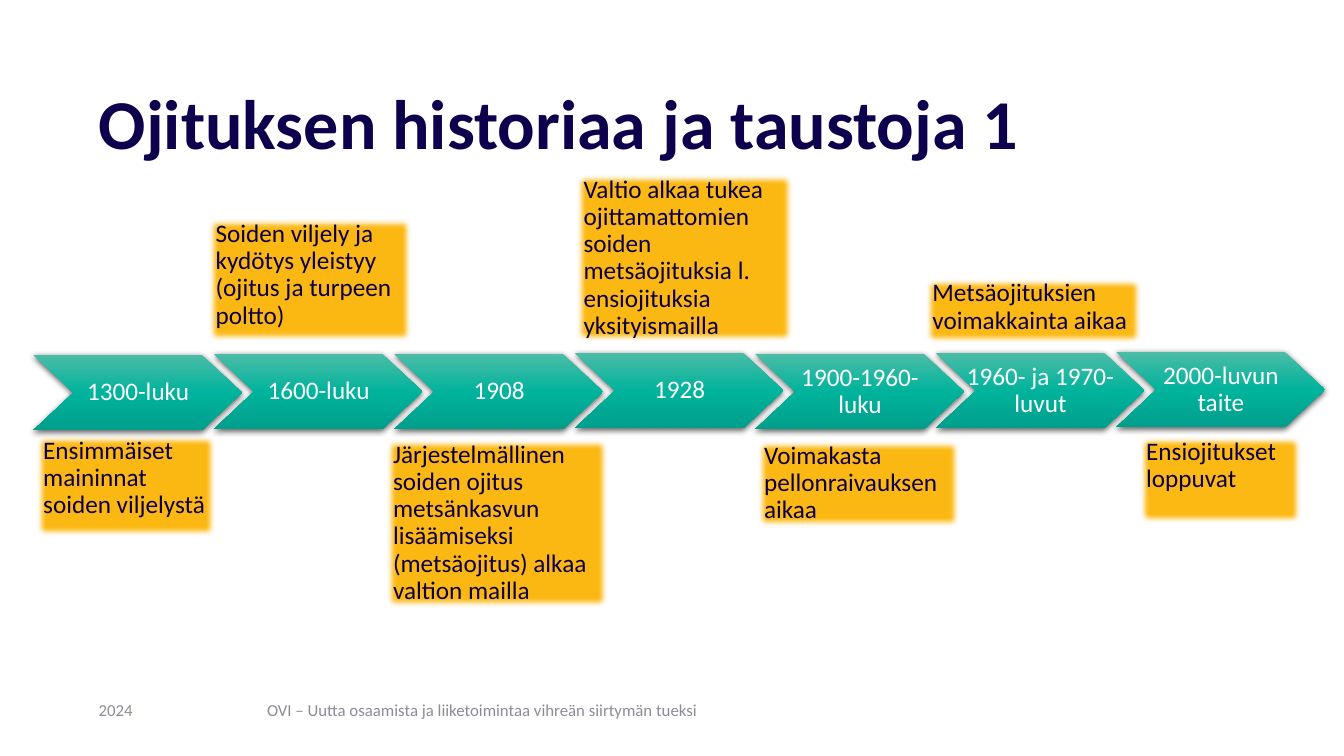
from copy import deepcopy

from lxml import etree
from pptx import Presentation
from pptx.dml.color import RGBColor
from pptx.enum.shapes import MSO_SHAPE
from pptx.enum.text import MSO_ANCHOR, PP_ALIGN
from pptx.oxml.ns import qn
from pptx.util import Inches, Pt

TOP, MIDDLE = MSO_ANCHOR.TOP, MSO_ANCHOR.MIDDLE
LEFT, CENTER = PP_ALIGN.LEFT, PP_ALIGN.CENTER
RECTANGLE = MSO_SHAPE.RECTANGLE

# Content
FONT = "Calibri"
COLORS = {"title": "0D004C", "note": "0D004B", "note_fill": "FDB913",
          "footer": "8C8C96", "period": "FFFFFF", "shadow": "000000"}
ARROW_GRADIENT = [(0, "4BBCA7"), (0.5, "00B39C"), (1, "009F8B")]

TITLE = "Ojituksen historiaa ja taustoja 1"
FOOTERS = [  # text, left, width
    ("2024", 0.88, 1.59),
    ("OVI – Uutta osaamista ja liiketoimintaa vihreän siirtymän tueksi", 2.55, 6.09),
]
# period, arrow top, note, note box (left, top, width, height)
TIMELINE = [
    ("1300-luku", 3.52, "Ensimmäiset maininnat soiden viljelystä",
     (0.33, 4.29, 1.84, 1.06)),
    ("1600-luku", 3.51, "Soiden viljely ja kydötys yleistyy (ojitus ja turpeen poltto)",
     (2.04, 2.14, 2.07, 1.28)),
    ("1908", 3.51, "Järjestelmällinen soiden ojitus metsänkasvun lisäämiseksi "
     "(metsäojitus) alkaa valtion mailla", (3.8, 4.33, 2.26, 1.73)),
    ("1928", 3.5, "Valtio alkaa tukea ojittamattomien soiden metsäojituksia l. "
     "ensiojituksia yksityismailla", (5.69, 1.7, 2.2, 1.72)),
    ("1900-1960-luku", 3.51, "Voimakasta pellonraivauksen aikaa",
     (7.48, 4.34, 2.07, 0.92)),
    ("1960- ja 1970-luvut", 3.5, "Metsäojituksien voimakkainta aikaa",
     (9.15, 2.73, 2.2, 0.71)),
    ("2000-luvun taite", 3.49, "Ensiojitukset loppuvat",
     (11.27, 4.3, 1.67, 0.92)),
]

# Arrow grid, in inches
FIRST_LEFT, PITCH = 0.33, 1.79
ARROW_W, ARROW_H, NOTCH = 2.07, 0.75, 0.4


def write(shape, text, size, color, align=LEFT, anchor=TOP, spacing=0.9, bold=False):
    frame = shape.text_frame
    frame.word_wrap = True
    frame.vertical_anchor = anchor
    paragraph = frame.paragraphs[0]
    paragraph.alignment = align
    paragraph.line_spacing = spacing
    run = paragraph.add_run()
    run.text = text
    run.font.name, run.font.size, run.font.bold = FONT, Pt(size), bold
    run.font.color.rgb = RGBColor.from_string(COLORS[color])


def add_effect(shape, tag, **attributes):
    shape.shadow.inherit = False
    effects = shape._element.spPr.find(qn("a:effectLst"))
    return etree.SubElement(effects, qn(tag), attributes)


def fill_arrow(arrow):
    arrow.fill.gradient()
    arrow.fill.gradient_angle = 270
    stop_list = arrow._element.spPr.find(".//" + qn("a:gsLst"))
    stop_list.append(deepcopy(stop_list[0]))
    for stop, (position, color) in zip(arrow.fill.gradient_stops, ARROW_GRADIENT):
        stop.position = position
        stop.color.rgb = RGBColor.from_string(color)
    arrow.line.fill.background()
    shadow = add_effect(arrow, "a:outerShdw", blurRad=str(Pt(4.5)), dist=str(Pt(1.5)),
                        dir="5400000", algn="ctr", rotWithShape="0")
    shade = etree.SubElement(shadow, qn("a:srgbClr"), val=COLORS["shadow"])
    etree.SubElement(shade, qn("a:alpha"), val="63000")


def add_arrow(arrows, left, top, period):
    right, bottom, middle = left + ARROW_W, top + ARROW_H, top + ARROW_H / 2
    outline = arrows.shapes.build_freeform(Inches(left), Inches(top))
    corners = [(right - NOTCH, top), (right, middle), (right - NOTCH, bottom),
               (left, bottom), (left + NOTCH, middle)]
    outline.add_line_segments([(Inches(x), Inches(y)) for x, y in corners], close=True)
    arrow = outline.convert_to_shape()
    fill_arrow(arrow)
    frame = arrow.text_frame
    frame.margin_left, frame.margin_right = Inches(0.29), Inches(0.28)
    frame.margin_top = frame.margin_bottom = Inches(0.01)
    write(arrow, period, 18, "period", CENTER, MIDDLE)


def add_note(slide, text, box):
    note = slide.shapes.add_shape(RECTANGLE, *map(Inches, box))
    note.fill.solid()
    note.fill.fore_color.rgb = RGBColor.from_string(COLORS["note_fill"])
    note.line.fill.background()
    add_effect(note, "a:softEdge", rad=str(Pt(5)))
    write(note, text, 18, "note")


def main():
    deck = Presentation()
    deck.slide_width, deck.slide_height = Inches(13.33), Inches(7.5)
    slide = deck.slides.add_slide(deck.slide_layouts[5])

    # Title and footer
    title = slide.shapes.title
    title.left, title.top, title.width, title.height = map(Inches, (0.88, 0.83, 11.51, 0.87))
    write(title, TITLE, 50, "title", bold=True)
    for text, left, width in FOOTERS:
        footer = slide.shapes.add_textbox(*map(Inches, (left, 6.82, width, 0.44)))
        write(footer, text, 12, "footer", anchor=MIDDLE, spacing=1.0)

    # Timeline arrows, then their notes
    arrows = slide.shapes.add_group_shape()
    for column, (period, top, _, _) in enumerate(TIMELINE):
        add_arrow(arrows, FIRST_LEFT + column * PITCH, top, period)
    for _, _, text, box in TIMELINE:
        add_note(slide, text, box)

    deck.save("out.pptx")


if __name__ == "__main__":
    main()
